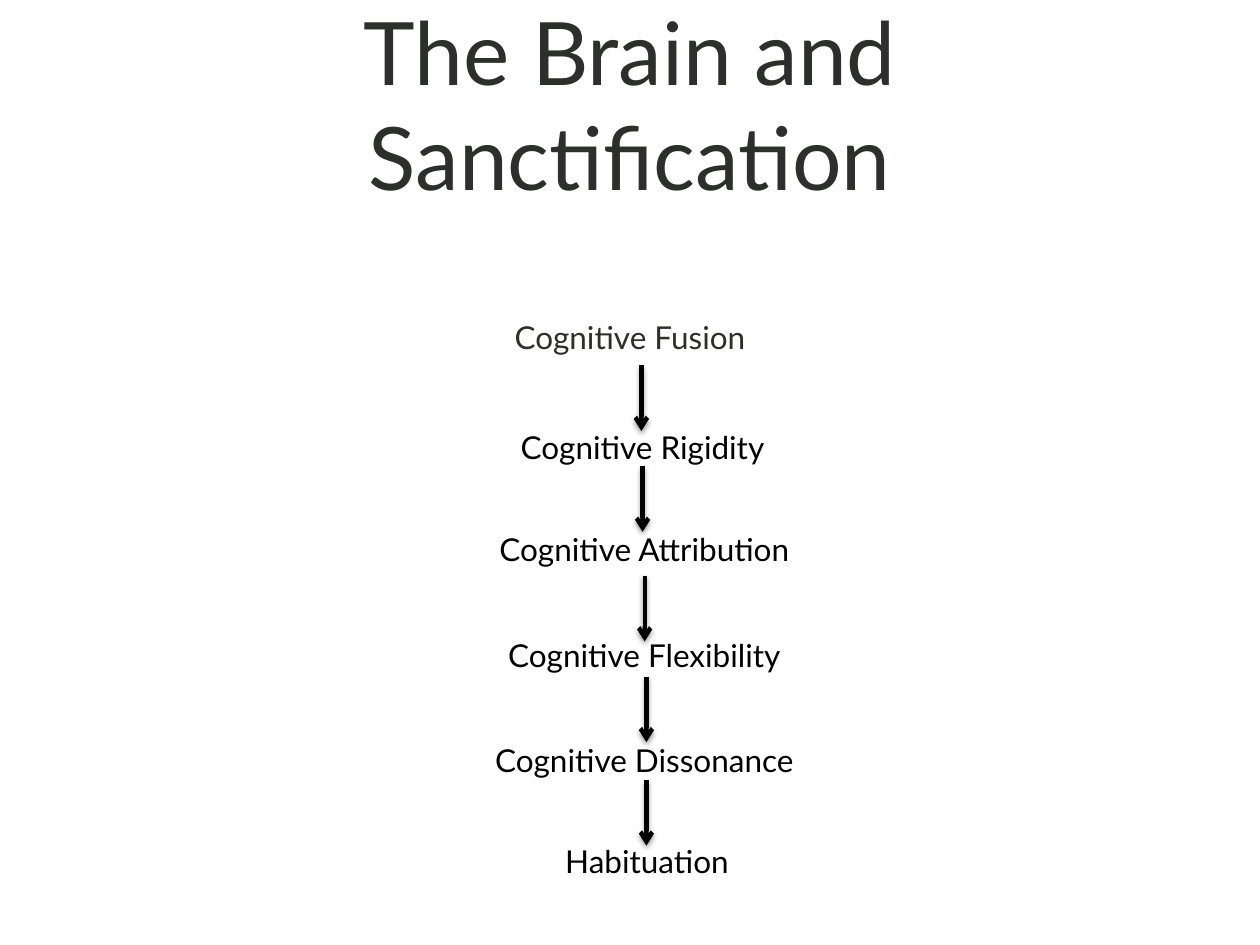
"""Build the slide that chains the steps of the brain and sanctification."""
from dataclasses import dataclass

from lxml.etree import SubElement as Sub
from pptx import Presentation as Deck
from pptx.dml.color import RGBColor as Color
from pptx.enum.shapes import MSO_CONNECTOR as Link
from pptx.enum.text import MSO_ANCHOR as Anchor, MSO_AUTO_SIZE as Fit, PP_ALIGN as Align
from pptx.oxml.ns import qn
from pptx.slide import Slide
from pptx.util import Pt


@dataclass(frozen=True)
class Theme:
    face: str = "Lato"
    dark: Color = Color(0x2D, 0x2F, 0x2B)
    black: Color = Color(0, 0, 0)
    head: float = 50
    body: float = 18
    line: float = 2.5
    blur: float = 3.1
    drop: float = 1.6


@dataclass(frozen=True)
class Label:
    text: str
    mid: float
    top: float
    width: float = 192
    height: float = 29
    size: float = Theme.body
    color: Color = Theme.black
    anchor: Anchor = Anchor.TOP
    fit: Fit = Fit.SHAPE_TO_FIT_TEXT


@dataclass(frozen=True)
class Arrow:
    mid: float
    top: float
    length: float = 37.5


LABELS = (
    Label("The Brain and Sanctification", 360, 5, 612, 108,
          Theme.head, Theme.dark, Anchor.MIDDLE, Fit.NONE),
    Label("Cognitive Fusion", 360, 178, 612, 288, color=Theme.dark, fit=Fit.NONE),
    Label("Cognitive Rigidity", 367.2, 241.2, 164),
    Label("Cognitive Attribution", 368.2, 299.5),
    Label("Cognitive Flexibility", 368.2, 360),
    Label("Cognitive Dissonance", 368.2, 419.8),
    Label("Habituation", 369.7, 477.4),
)
ARROWS = (
    Arrow(366.5, 208.8),
    Arrow(367.2, 266.4),
    Arrow(368.4, 329),
    Arrow(369.4, 386.6),
    Arrow(369.4, 445.7),
)


def style(part: object, form: dict) -> None:
    """Set each format value on the part."""
    for name, value in form.items():
        setattr(part, name, value)


def write(slide: Slide, label: Label) -> None:
    """Draw one centred label."""
    box = slide.shapes.add_textbox(Pt(label.mid - label.width / 2), Pt(label.top),
                                   Pt(label.width), Pt(label.height))
    frame = box.text_frame
    style(frame, {"word_wrap": True, "auto_size": label.fit,
                  "vertical_anchor": label.anchor})
    para = frame.paragraphs[0]
    style(para, {"text": label.text, "alignment": Align.CENTER})
    font = para.runs[0].font
    style(font, {"name": Theme.face, "size": Pt(label.size)})
    font.color.rgb = label.color


def point(slide: Slide, arrow: Arrow) -> None:
    """Draw one downward arrow with a soft shadow."""
    mid, top = Pt(arrow.mid), Pt(arrow.top)
    link = slide.shapes.add_connector(Link.STRAIGHT, mid, top, mid,
                                      top + Pt(arrow.length))
    link.line.width = Pt(Theme.line)
    link.line.color.rgb = Theme.black
    Sub(link.line._get_or_add_ln(), qn("a:tailEnd"), type="arrow")
    effect = Sub(link._element.spPr, qn("a:effectLst"))
    shade = Sub(effect, qn("a:outerShdw"), blurRad=str(Pt(Theme.blur)),
                dist=str(Pt(Theme.drop)), dir="5400000", rotWithShape="0")
    tint = Sub(shade, qn("a:srgbClr"), val=str(Theme.black))
    Sub(tint, qn("a:alpha"), val="38000")


def main() -> None:
    """Build and save the deck."""
    deck = Deck()
    style(deck, {"slide_width": Pt(720), "slide_height": Pt(540)})
    slide = deck.slides.add_slide(deck.slide_layouts[6])
    for label in LABELS:
        write(slide, label)
    for arrow in ARROWS:
        point(slide, arrow)
    deck.save("out.pptx")


if __name__ == "__main__":
    main()
